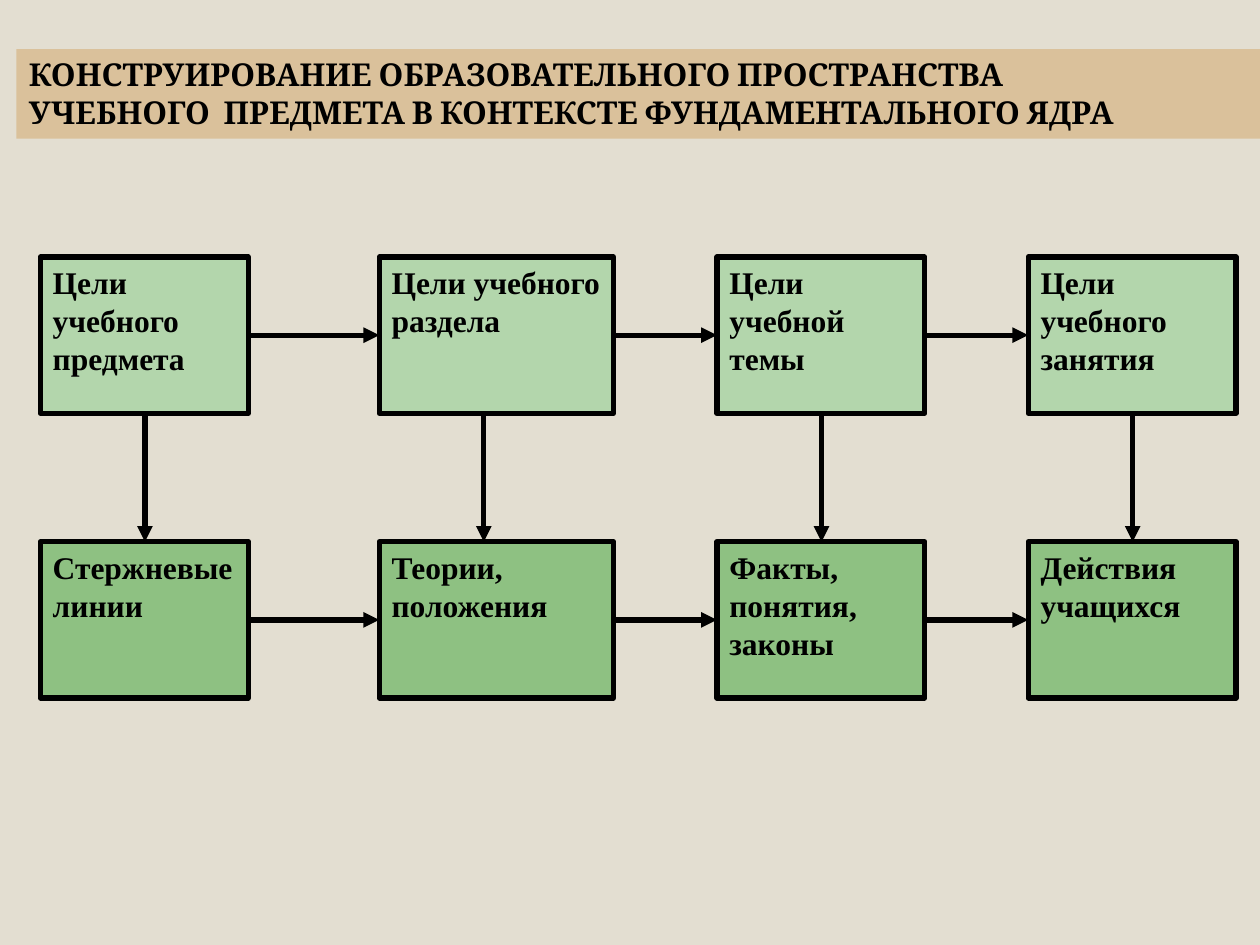
from itertools import pairwise

from lxml.etree import SubElement
from pptx import Presentation
from pptx.dml.color import RGBColor
from pptx.enum.shapes import MSO_CONNECTOR, MSO_SHAPE
from pptx.enum.text import MSO_ANCHOR, PP_ALIGN
from pptx.oxml.ns import qn
from pptx.util import Inches, Pt

BACKGROUND = RGBColor(0xE3, 0xDE, 0xD1)
BANNER = RGBColor(0xDA, 0xC1, 0x9B)
LIGHT_GREEN = RGBColor(0xB3, 0xD6, 0xAC)
GREEN = RGBColor(0x8E, 0xC1, 0x82)
BLACK = RGBColor(0, 0, 0)

TITLE_LINES = [
    "КОНСТРУИРОВАНИЕ ОБРАЗОВАТЕЛЬНОГО ПРОСТРАНСТВА",
    "УЧЕБНОГО  ПРЕДМЕТА В КОНТЕКСТЕ ФУНДАМЕНТАЛЬНОГО ЯДРА",
]
COLUMNS = [(0.32, 1.65), (3.01, 1.86), (5.69, 1.65), (8.16, 1.65)]
ROWS = [
    (2.04, LIGHT_GREEN, ["Цели учебного предмета", "Цели учебного раздела",
                         "Цели учебной темы", "Цели учебного занятия"]),
    (4.3, GREEN, ["Стержневые линии", "Теории, положения",
                  "Факты, понятия, законы", "Действия учащихся"]),
]
BOX_HEIGHT = 1.24
DOWN_ARROW_OFFSET = 0.83
LINE_WIDTH = Pt(3)


def set_attributes(target, values):
    for name, value in values.items():
        setattr(target, name, value)


def paint(target, color):
    target.fill.solid()
    target.fill.fore_color.rgb = color


def write_lines(shape, lines, font_name, wrap):
    frame = shape.text_frame
    set_attributes(frame, {"word_wrap": wrap, "vertical_anchor": MSO_ANCHOR.TOP})
    frame.text = "\n".join(lines)
    for para in frame.paragraphs:
        para.alignment = PP_ALIGN.LEFT
        for span in para.runs:
            set_attributes(span.font, {"name": font_name, "size": Pt(18), "bold": True})
            span.font.color.rgb = BLACK


def add_title(page):
    title = page.shapes.title
    set_attributes(title, {"left": Inches(0.13), "top": Inches(0.39),
                           "width": Inches(9.87), "height": Inches(0.71)})
    paint(title, BANNER)
    write_lines(title, TITLE_LINES, "Cambria", False)


def add_box(page, left, top, width, color, text):
    box = page.shapes.add_shape(MSO_SHAPE.RECTANGLE, Inches(left), Inches(top),
                                Inches(width), Inches(BOX_HEIGHT))
    box.shadow.inherit = False
    paint(box, color)
    box.line.color.rgb = BLACK
    box.line.width = LINE_WIDTH
    write_lines(box, [text], "Times New Roman", True)


def add_arrow(page, *ends):
    arrow = page.shapes.add_connector(MSO_CONNECTOR.STRAIGHT, *map(Inches, ends))
    arrow.line.color.rgb = BLACK
    arrow.line.width = LINE_WIDTH
    SubElement(arrow.line._get_or_add_ln(), qn("a:tailEnd"), type="triangle")
    SubElement(arrow._element.spPr, qn("a:effectLst"))


def main():
    deck = Presentation()
    set_attributes(deck, {"slide_width": Inches(10), "slide_height": Inches(7.5)})
    page = deck.slides.add_slide(deck.slide_layouts[5])
    paint(page.background, BACKGROUND)
    for top, color, labels in ROWS:
        for (left, width), text in zip(COLUMNS, labels):
            add_box(page, left, top, width, color, text)
        middle = top + BOX_HEIGHT / 2
        for (left, width), (next_left, _) in pairwise(COLUMNS):
            add_arrow(page, left + width, middle, next_left, middle)
    upper_top, lower_top = (row[0] for row in ROWS)
    for left, _ in COLUMNS:
        center = left + DOWN_ARROW_OFFSET
        add_arrow(page, center, upper_top + BOX_HEIGHT, center, lower_top)
    add_title(page)
    deck.save("out.pptx")


if __name__ == "__main__":
    main()
